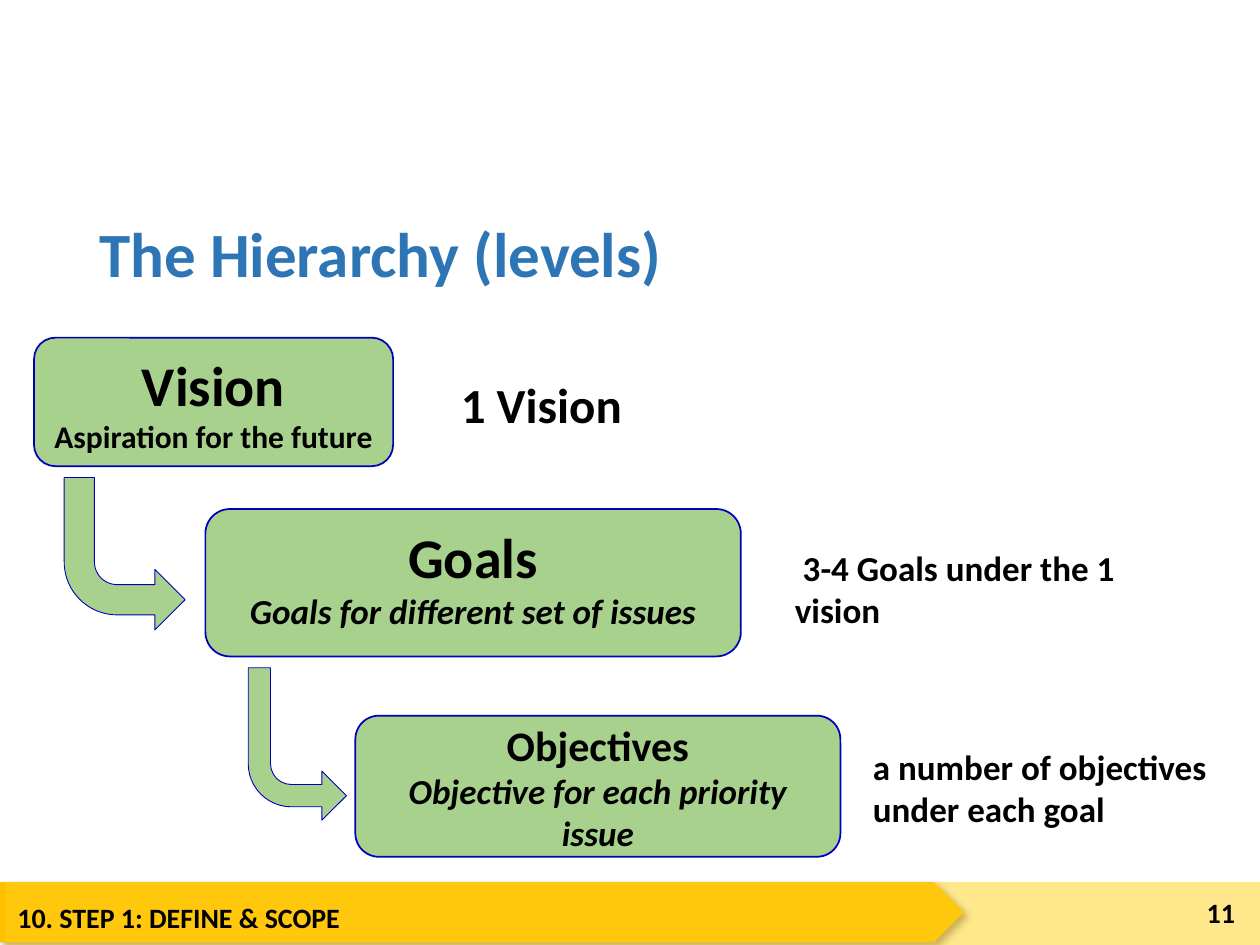
"""Build the slide on the hierarchy of vision, goals and objectives."""
from lxml import etree
from pptx import Presentation, util as u
from pptx.dml.color import RGBColor
from pptx.enum import shapes, text
from pptx.oxml.ns import qn

BLACK = RGBColor(0x00, 0x00, 0x00)
TITLE_BLUE = RGBColor(0x2E, 0x75, 0xB6)
LINE_BLUE = RGBColor(0x00, 0x00, 0xBA)
GREEN = RGBColor(0xA9, 0xD1, 0x8E)
GOLD = RGBColor(0xFF, 0xC0, 0x00)
PALE_GOLD = RGBColor(0xFF, 0xD0, 0x1B)

SHAPE = shapes.MSO_SHAPE
ALIGN = text.PP_ALIGN
ANCHOR = text.MSO_ANCHOR

LEVELS = [
    ((0.27, 2.68, 2.85, 1.02), ANCHOR.TOP, ("Vision", 32), ("Aspiration for the future", 18, False)),
    ((1.63, 4.04, 4.25, 1.17), ANCHOR.TOP, ("Goals", 32), ("Goals for different set of issues", 20, True)),
    ((2.82, 5.68, 3.85, 1.12), ANCHOR.MIDDLE, ("Objectives", 24), ("Objective for each priority issue", 20, True)),
]
ARROWS = [
    ((0.51, 3.79, 0.96, 1.21), (0.25, 0.25, 0.25, 0.438)),
    ((1.97, 5.3, 0.78, 1.21), (0.227, 0.25, 0.25, 0.438)),
]
NOTES = [
    ((3.56, 2.92, 1.8, 0.57), ["1 Vision"], 28),
    ((6.21, 4.29, 3.22, 0.77), [" 3-4 Goals under the 1 vision"], 20),
    ((6.83, 5.87, 2.97, 0.77), ["a number of objectives", "under each goal"], 20),
]


def write(para, words, size=20, color=BLACK, italic=False, align=ALIGN.LEFT, spacing=None):
    """Put bold, formatted words into a paragraph."""
    para.alignment = align
    para.line_spacing = spacing
    span = para.add_run()
    span.text = words
    font = span.font
    font.name, font.size, font.bold, font.italic = "Calibri", u.Pt(size), True, italic
    font.color.rgb = color


def add_text(page, place, lines, anchor=ANCHOR.TOP, **style):
    """Add a wrapping text box with one paragraph for each line."""
    box = page.shapes.add_textbox(*map(u.Inches, place))
    frame = box.text_frame
    frame.word_wrap = True
    frame.vertical_anchor = anchor
    for index, words in enumerate(lines):
        para = frame.add_paragraph() if index else frame.paragraphs[0]
        write(para, words, **style)


def add_block(page, kind, place, fill, line_width=None):
    """Add a filled preset shape, outlined only if a line width is given."""
    block = page.shapes.add_shape(kind, *map(u.Inches, place))
    block.shadow.inherit = False
    block.fill.solid()
    block.fill.fore_color.rgb = fill
    if line_width:
        block.line.color.rgb = LINE_BLUE
        block.line.width = u.Pt(line_width)
    else:
        block.line.fill.background()
    return block


def add_level(page, place, anchor, heading, detail):
    """Add one rounded box with its heading and explanation."""
    frame = add_block(page, SHAPE.ROUNDED_RECTANGLE, place, GREEN, 1).text_frame
    frame.word_wrap = True
    frame.vertical_anchor = anchor
    write(frame.paragraphs[0], heading[0], size=heading[1], align=ALIGN.CENTER)
    words, size, italic = detail
    write(frame.add_paragraph(), words, size=size, italic=italic, align=ALIGN.CENTER)


def add_arrow(page, place, adjustments):
    """Add a bent arrow that leads down to the next level."""
    arrow = add_block(page, SHAPE.BENT_ARROW, place, GREEN, 0.5)
    for index, value in enumerate(adjustments):
        arrow.adjustments[index] = value
    arrow.element.spPr.find(qn("a:xfrm")).set("flipV", "1")


def add_footer(page):
    """Add the golden footer band with its label and page number."""
    banner = add_block(page, SHAPE.PENTAGON, (0, 7, 7.65, 0.48), GOLD)
    effects = banner.element.spPr.find(qn("a:effectLst"))
    shadow = etree.SubElement(effects, qn("a:outerShdw"), blurRad=str(u.Pt(4)), dist=str(u.Pt(3)),
                              dir="2700000", algn="tl", rotWithShape="0")
    shade = etree.SubElement(shadow, qn("a:srgbClr"), val=str(BLACK))
    etree.SubElement(shade, qn("a:alpha"), val="40000")
    veil = add_block(page, SHAPE.RECTANGLE, (0.04, 7, 9.96, 0.53), PALE_GOLD)
    tint = veil.element.spPr.find(qn("a:solidFill")).find(qn("a:srgbClr"))
    etree.SubElement(tint, qn("a:alpha"), val="50000")
    add_text(page, (0.04, 7.1, 7.35, 0.41), ["10. STEP 1: DEFINE & SCOPE"], size=16)
    add_text(page, (9.17, 7.04, 0.73, 0.4), ["11"], ANCHOR.MIDDLE, size=16, align=ALIGN.RIGHT)


def main():
    """Build and save the deck."""
    deck = Presentation()
    deck.slide_width, deck.slide_height = u.Inches(10), u.Inches(7.5)
    page = deck.slides.add_slide(deck.slide_layouts[6])
    add_footer(page)
    add_text(page, (0.69, 1.63, 8.62, 0.82), ["The Hierarchy (levels)"], ANCHOR.MIDDLE,
             size=36, color=TITLE_BLUE, spacing=0.9)
    for arrow in ARROWS:
        add_arrow(page, *arrow)
    for level in LEVELS:
        add_level(page, *level)
    for place, lines, size in NOTES:
        add_text(page, place, lines, size=size)
    deck.save("out.pptx")


if __name__ == "__main__":
    main()
